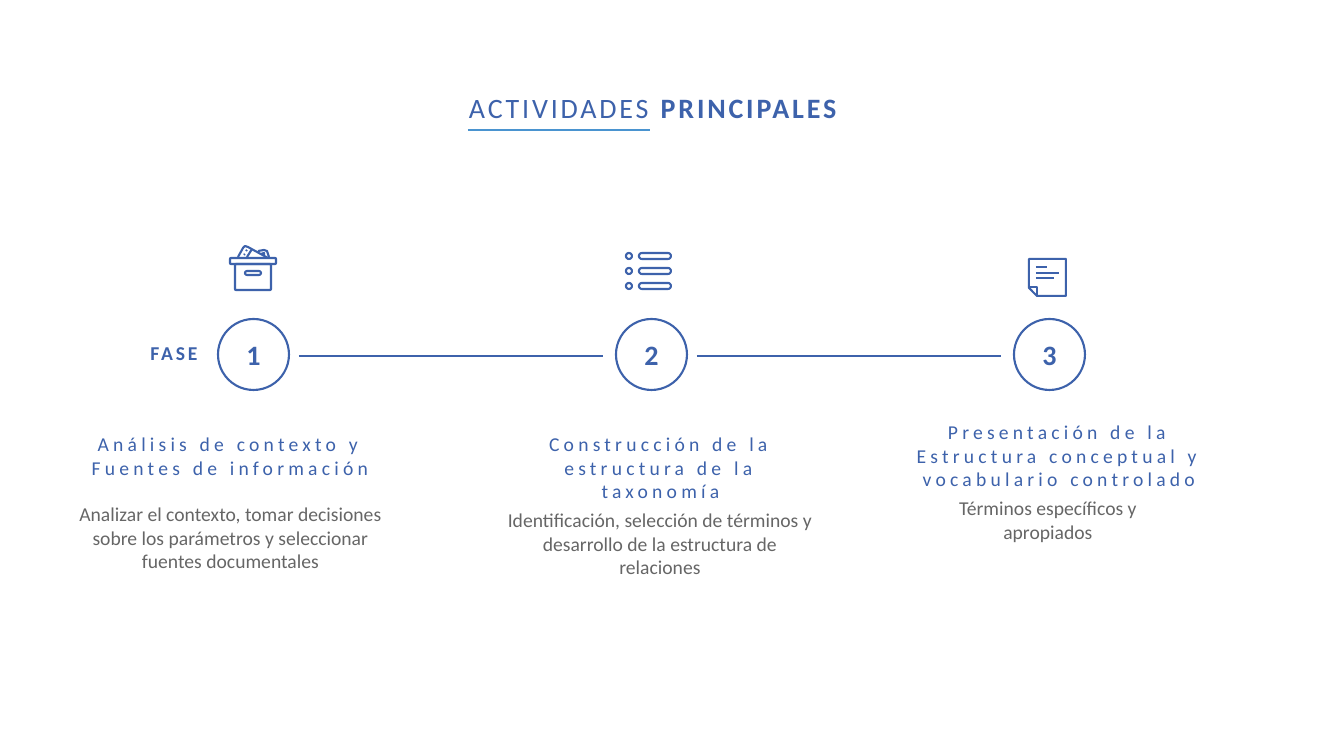
"""Build the slide of main activities in three phases."""
import math

import pptx
import pptx.dml.color
import pptx.enum.shapes
import pptx.enum.text
import pptx.oxml.ns
import pptx.util
from lxml import etree

PX = 914400 / 100.8
FINE = 10
BLUE = pptx.dml.color.RGBColor(0x3D, 0x62, 0xAB)
SKY = pptx.dml.color.RGBColor(0x4A, 0x94, 0xD0)
GREY = pptx.dml.color.RGBColor(0x66, 0x66, 0x66)
CENTER = pptx.enum.text.PP_ALIGN.CENTER
LEFT = pptx.enum.text.PP_ALIGN.LEFT

PHASE_STEP = 398
PHASES = [
    ("Análisis de contexto y Fuentes de información", (82, 432, 306, 47),
     "Analizar el contexto, tomar decisiones sobre los parámetros y seleccionar fuentes documentales",
     (64, 502, 343, 71)),
    ("Construcción de la estructura de la taxonomía", (504, 432, 323, 71),
     "Identificación, selección de términos y desarrollo de la estructura de relaciones",
     (502, 508, 326, 71)),
    ("Presentación de la Estructura conceptual y vocabulario controlado", (912, 420, 304, 71),
     "Términos específicos y apropiados", (913, 496, 280, 47)),
]


def px(*lengths):
    """Turn pixel lengths into EMU."""
    return [pptx.util.Emu(round(length * PX)) for length in lengths]


def add_run(paragraph, text, size, color, bold=False, spacing=0):
    """Add a formatted run, with letter spacing in points."""
    run = paragraph.add_run()
    run.text = text
    formats = {"name": "Calibri", "size": pptx.util.Pt(size), "bold": bold}
    for name, value in formats.items():
        setattr(run.font, name, value)
    run.font.color.rgb = color
    if spacing:
        run._r.get_or_add_rPr().set("spc", str(spacing * 100))


def add_label(slide, area, runs, align=CENTER, inset=0, line_spacing=None):
    """Add a wrapped text box holding one paragraph."""
    frame = slide.shapes.add_textbox(*px(*area)).text_frame
    formats = {
        "word_wrap": True,
        "auto_size": pptx.enum.text.MSO_AUTO_SIZE.SHAPE_TO_FIT_TEXT,
        "margin_left": 0, "margin_top": 0, "margin_bottom": 0,
        "margin_right": px(inset)[0],
    }
    for name, value in formats.items():
        setattr(frame, name, value)
    paragraph = frame.paragraphs[0]
    paragraph.alignment = align
    if line_spacing:
        paragraph.line_spacing = line_spacing
    for run in runs:
        add_run(paragraph, **run)


def style_outline(shape):
    """Leave a shape hollow with a blue outline."""
    shape.shadow.inherit = False
    shape.fill.background()
    shape.line.color.rgb = BLUE
    shape.line.width = pptx.util.Pt(1.5)


def rounded(left, top, right, bottom, radius):
    """Return the points of a closed rounded rectangle."""
    corners = [(right - radius, bottom - radius), (left + radius, bottom - radius),
               (left + radius, top + radius), (right - radius, top + radius)]
    points = []
    for quarter, (x, y) in enumerate(corners):
        for step in range(5):
            angle = math.radians(90 * quarter + 22.5 * step)
            points.append((x + radius * math.cos(angle), y + radius * math.sin(angle)))
    return points + points[:1]


def add_icon(slide, contours):
    """Draw an icon as one hollow outline of several contours."""
    fine = [[(x * FINE, y * FINE) for x, y in contour] for contour in contours]
    builder = slide.shapes.build_freeform(*fine[0][0], scale=PX / FINE)
    for index, (start, *rest) in enumerate(fine):
        if index:
            builder.move_to(*start)
        builder.add_line_segments(rest, close=start == rest[-1])
    style_outline(builder.convert_to_shape())


def add_rule(slide, left, right, y, color=BLUE, width=1.5):
    """Add a horizontal line."""
    rule = slide.shapes.add_connector(
        pptx.enum.shapes.MSO_CONNECTOR.STRAIGHT, *px(left, y, right, y))
    rule.line.color.rgb = color
    rule.line.width = pptx.util.Pt(width)
    etree.SubElement(rule._element.spPr, pptx.oxml.ns.qn("a:effectLst"))


def add_phase(slide, index, heading, heading_area, detail, detail_area):
    """Add a numbered circle with its heading and detail."""
    circle = slide.shapes.add_shape(pptx.enum.shapes.MSO_SHAPE.OVAL,
                                    *px(218 + index * PHASE_STEP, 319, 71, 71))
    style_outline(circle)
    circle.text_frame.vertical_anchor = pptx.enum.text.MSO_ANCHOR.MIDDLE
    number = circle.text_frame.paragraphs[0]
    number.alignment = CENTER
    add_run(number, str(index + 1), 20, BLUE, bold=True)
    add_label(slide, heading_area,
              [dict(text=heading, size=14, color=BLUE, spacing=3)], inset=10)
    add_label(slide, detail_area, [dict(text=detail, size=14, color=GREY)], inset=10)


def add_box_icon(slide):
    """Draw the archive box with two tickets."""
    add_icon(slide, [
        rounded(230, 258, 276, 264, 1),
        rounded(235, 264, 271, 290, 1),
        rounded(245, 271, 261, 275, 2),
        [(238, 257), (243, 248), (245, 246), (248, 247), (268, 258)],
        [(247, 257), (252, 249)],
        [(258, 251), (264, 250), (267, 251), (269, 257)],
        [(261, 254), (264, 253), (264, 255)],
        [(244, 255), (245, 254)],
        [(246, 251), (247, 250)],
    ])


def add_list_icon(slide):
    """Draw the three-row list."""
    rows = []
    for top in range(253, 284, 15):
        rows.append(rounded(626, top, 632, top + 6, 3))
        rows.append(rounded(639, top, 671, top + 6, 3))
    add_icon(slide, rows)


def add_note_icon(slide):
    """Draw the note with a folded corner."""
    writing = [[(1036, y), (right, y)] for right, y in [(1047, 267), (1059, 273), (1054, 278)]]
    sheet = [(1029, 259), (1066, 259), (1066, 296), (1037, 296), (1029, 288), (1029, 259)]
    fold = [(1029, 287), (1037, 287), (1037, 296)]
    add_icon(slide, [sheet, fold, *writing])


def main():
    """Compose and save the slide."""
    deck = pptx.Presentation()
    deck.slide_width, deck.slide_height = px(1344, 756)
    slide = deck.slides.add_slide(deck.slide_layouts[6])

    for index, phase in enumerate(PHASES):
        add_phase(slide, index, *phase)
    for gap in range(len(PHASES) - 1):
        add_rule(slide, 299 + gap * PHASE_STEP, 603 + gap * PHASE_STEP, 356)

    title = dict(size=20, color=BLUE, spacing=2)
    add_label(slide, (469, 97, 406, 28),
              [dict(title, text="ACTIVIDADES "), dict(title, text="PRINCIPALES", bold=True)],
              align=LEFT, line_spacing=0.8)
    add_rule(slide, 468, 650, 130, SKY, 2)
    add_label(slide, (12, 345, 324, 19),
              [dict(text="FASE", size=14, color=BLUE, bold=True, spacing=2)], line_spacing=0.8)

    add_box_icon(slide)
    add_list_icon(slide)
    add_note_icon(slide)
    deck.save("out.pptx")


if __name__ == "__main__":
    main()
